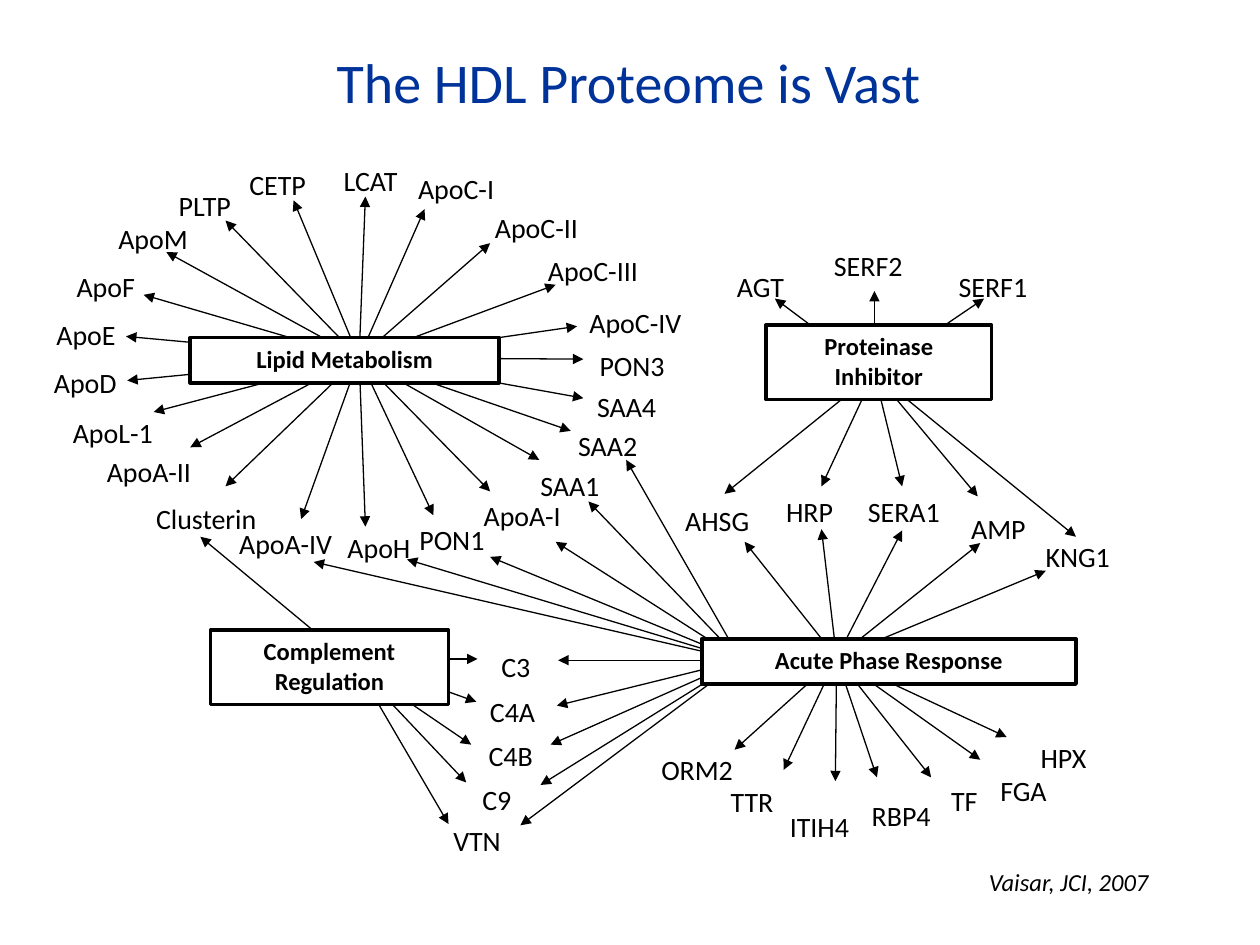
from lxml import etree
from pptx import Presentation
from pptx import util as u
from pptx.dml.color import RGBColor
from pptx.enum import shapes, text
from pptx.oxml.ns import qn

COLORS = {"title": "003399", "ink": "000000", "paper": "FFFFFF"}
FONT = "Calibri"
LABEL_HEIGHT = 0.37

PROTEINS = {
    "LCAT": (2.63, 1.25, 0.77),
    "ApoC-I": (3.22, 1.31, 0.89),
    "ApoC-II": (3.83, 1.62, 0.95),
    "ApoC-III": (4.25, 1.96, 1.02),
    "ApoC-IV": (4.58, 2.38, 1.04),
    "PON3": (4.66, 2.72, 0.81),
    "SAA4": (4.64, 3.04, 0.77),
    "SAA2": (4.49, 3.35, 0.77),
    "SAA1": (4.19, 3.67, 0.77),
    "ApoA-I": (3.74, 3.91, 0.88),
    "PON1": (3.23, 4.1, 0.81),
    "ApoH": (2.66, 4.16, 0.76),
    "ApoA-IV": (1.8, 4.13, 1.03),
    "Clusterin": (1.14, 3.93, 1.08),
    "ApoA-II": (0.75, 3.56, 0.94),
    "ApoL-1": (0.48, 3.25, 0.92),
    "ApoD": (0.33, 2.85, 0.76),
    "ApoE": (0.35, 2.47, 0.74),
    "ApoF": (0.51, 2.09, 0.73),
    "ApoM": (0.84, 1.71, 0.78),
    "PLTP": (1.32, 1.45, 0.76),
    "CETP": (1.88, 1.28, 0.79),
    "AGT": (5.75, 2.09, 0.66),
    "SERF2": (6.52, 1.92, 0.91),
    "SERF1": (7.51, 2.09, 0.91),
    "AHSG": (5.34, 3.95, 0.83),
    "HRP": (6.14, 3.88, 0.67),
    "SERA1": (6.79, 3.88, 0.93),
    "AMP": (7.61, 4.01, 0.81),
    "KNG1": (8.2, 4.23, 0.89),
    "C3": (3.88, 5.11, 0.48),
    "C4A": (3.79, 5.46, 0.63),
    "C4B": (3.78, 5.81, 0.63),
    "C9": (3.73, 6.16, 0.48),
    "VTN": (3.5, 6.49, 0.64),
    "ORM2": (5.15, 5.92, 0.84),
    "TTR": (5.7, 6.18, 0.63),
    "ITIH4": (6.17, 6.38, 0.74),
    "RBP4": (6.82, 6.29, 0.78),
    "TF": (7.45, 6.17, 0.47),
    "FGA": (7.84, 6.09, 0.75),
    "HPX": (8.16, 5.83, 0.75),
}

ARROW_FANS = [
    ((2.85, 2.84), [
        (2.9, 1.56), (3.37, 1.66), (3.89, 1.93), (4.41, 2.26), (4.58, 2.59),
        (4.63, 2.85), (4.63, 3.16), (4.53, 3.42), (4.28, 3.65), (3.89, 3.9),
        (3.44, 4.09), (2.9, 4.18), (2.39, 4.12), (1.79, 3.86), (1.51, 3.55),
        (1.22, 3.27), (1.01, 3.02), (1, 2.67), (1.14, 2.34), (1.32, 2),
        (1.79, 1.75), (2.33, 1.59)]),
    ((6.94, 2.96), [
        (6.15, 2.37), (6.94, 2.31), (7.81, 2.37), (5.75, 3.92),
        (6.52, 3.86), (7.16, 3.86), (7.76, 3.94), (8.54, 4.26)]),
    ((2.83, 5.23), [(3.79, 5.23), (3.78, 5.57)]),
    ((2.83, 5.29), [(1.59, 4.26), (3.74, 5.91), (3.7, 6.21), (3.56, 6.54)]),
    ((5.88, 5.24), [
        (4.97, 3.65), (4.67, 3.98), (4.41, 4.3), (3.89, 4.42), (3.23, 4.44),
        (2.49, 4.46), (4.43, 5.24), (4.42, 5.6), (4.37, 5.91), (4.29, 6.23),
        (4.13, 6.55)]),
    ((6.64, 5.22), [
        (5.91, 4.3), (6.52, 4.2), (7.16, 4.21), (7.78, 4.31), (8.3, 4.53),
        (5.83, 5.95), (6.22, 6.11), (6.63, 6.2), (6.96, 6.17), (7.39, 6.17),
        (7.78, 6.03), (7.99, 5.85)]),
]

FUNCTIONS = [
    (["Lipid Metabolism"], (1.51, 2.68, 2.45, 0.36)),
    (["Proteinase", "Inhibitor"], (6.08, 2.58, 1.79, 0.59)),
    (["Complement", "Regulation"], (1.67, 5, 1.89, 0.59)),
    (["Acute Phase Response"], (5.57, 5.07, 2.97, 0.36)),
]


def inches(values):
    return [u.Inches(value) for value in values]


def color(name):
    return RGBColor.from_string(COLORS[name])


def write(frame, lines, size, ink="ink", align=text.PP_ALIGN.LEFT,
          bold=False, italic=False, wrap=True):
    frame.text = "\n".join(lines)
    frame.word_wrap = wrap
    frame.auto_size = text.MSO_AUTO_SIZE.SHAPE_TO_FIT_TEXT
    for paragraph in frame.paragraphs:
        paragraph.alignment = align
        for run in paragraph.runs:
            run.font.name = FONT
            run.font.size = u.Pt(size)
            run.font.bold = bold
            run.font.italic = italic
            run.font.color.rgb = color(ink)


def add_label(slide, wording, place, size, **style):
    label = slide.shapes.add_textbox(*inches(place))
    write(label.text_frame, [wording], size, **style)


def add_arrow(slide, start, tip):
    arrow = slide.shapes.add_connector(
        shapes.MSO_CONNECTOR.STRAIGHT, *inches(start + tip))
    arrow.line.color.rgb = color("ink")
    arrow.line.width = u.Pt(0.75)
    etree.SubElement(arrow.line._get_or_add_ln(), qn("a:tailEnd"), type="triangle")
    etree.SubElement(arrow._element.spPr, qn("a:effectLst"))


def add_function_box(slide, lines, place):
    box = slide.shapes.add_shape(shapes.MSO_SHAPE.RECTANGLE, *inches(place))
    box.shadow.inherit = False
    box.fill.solid()
    box.fill.fore_color.rgb = color("paper")
    box.line.color.rgb = color("ink")
    box.line.width = u.Pt(2)
    box.text_frame.vertical_anchor = text.MSO_ANCHOR.TOP
    write(box.text_frame, lines, 14, align=text.PP_ALIGN.CENTER, bold=True)


def main():
    deck = Presentation()
    deck.slide_width, deck.slide_height = inches((10, 7.5))
    slide = deck.slides.add_slide(deck.slide_layouts[6])

    add_label(slide, "The HDL Proteome is Vast", (1.98, 0.33, 6.02, 0.64), 32,
              ink="title", align=text.PP_ALIGN.CENTER)
    for protein, place in PROTEINS.items():
        add_label(slide, protein, place + (LABEL_HEIGHT,), 16, wrap=False)
    for start, tips in ARROW_FANS:
        for tip in tips:
            add_arrow(slide, start, tip)
    for lines, place in FUNCTIONS:
        add_function_box(slide, lines, place)
    add_label(slide, "Vaisar, JCI, 2007", (7.75, 6.83, 1.69, 0.33), 14,
              italic=True, wrap=False)

    deck.save("out.pptx")


if __name__ == "__main__":
    main()
